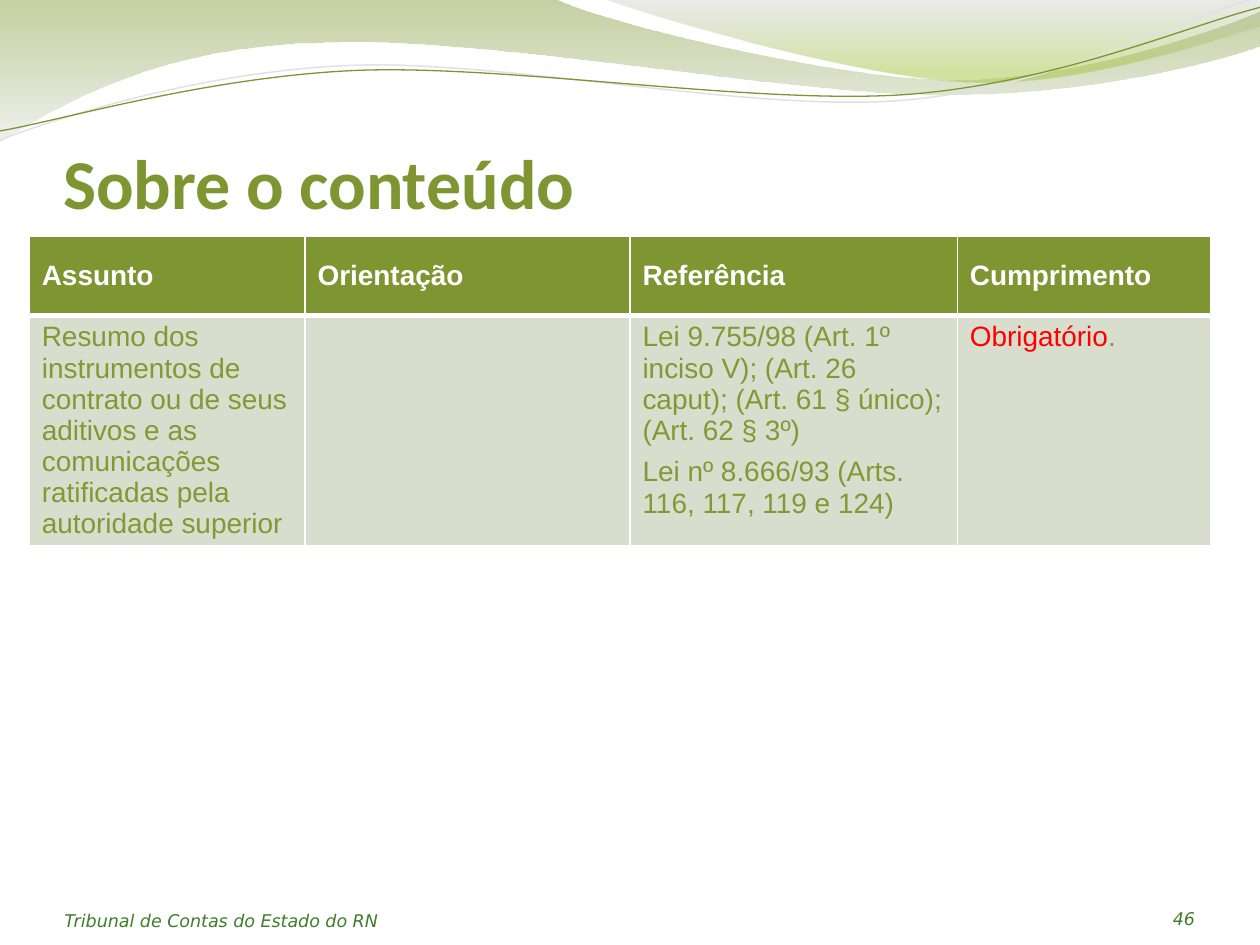
from lxml import etree
from pptx import Presentation
from pptx import util as u
from pptx.dml.color import RGBColor
from pptx.enum import text
from pptx.oxml.ns import qn

GREEN = RGBColor(0x7E, 0x95, 0x32)
BODY_GREEN = RGBColor(0x82, 0x99, 0x34)
FOOTER_GREEN = RGBColor(0x3F, 0x7D, 0x2B)
BAND_GREEN = RGBColor(0x80, 0x99, 0x30)
LIME = RGBColor(0x9E, 0xC1, 0x2F)
SILVER = RGBColor(0xBD, 0xBD, 0xBD)
PALE = RGBColor(0xE7, 0xE7, 0xE7)
LINE_GREY = RGBColor(0xE1, 0xE1, 0xE1)
CELL = RGBColor(0xD8, 0xDD, 0xCE)
WHITE = RGBColor(0xFF, 0xFF, 0xFF)
RED = RGBColor(0xFF, 0x00, 0x00)


def add_run(p, wording, color, **fmt):
    r = p.add_run()
    r.text = wording
    r.font.color.rgb = color
    for name, value in fmt.items():
        setattr(r.font, name, value)


def add_curve(shapes, start, segments, close):
    """Draw line (1 point) and cubic (3 points) segments, in centimetres."""
    fb = shapes.build_freeform(u.Cm(start[0]), u.Cm(start[1]))
    fb.add_line_segments([(u.Cm(x), u.Cm(y)) for seg in segments for x, y in seg],
                         close=close)
    sp = fb.convert_to_shape()
    sp.shadow.inherit = False
    # Merge each three control points into one Bézier segment
    steps = iter(list(sp._element.iter(qn("a:lnTo"))))
    for seg in segments:
        first = next(steps)
        if len(seg) == 3:
            first.tag = qn("a:cubicBezTo")
            for _ in range(2):
                step = next(steps)
                first.append(step[0])
                step.getparent().remove(step)
    return sp


prs = Presentation()
prs.slide_width, prs.slide_height = u.Cm(25.4), u.Cm(19.05)
s = prs.slides.add_slide(prs.slide_layouts[5])

# Gradient bands: start, segments, stops (position, colour, opacity)
bands = [
    ((0, -0.03), [[(11.18, -0.03)],
                  [(12.09, 0.43), (16.87, 1.6), (19.25, 1.6)],
                  [(21.67, 1.6), (24.33, 0.66), (25.4, 0.23)],
                  [(25.43, 0.91)],
                  [(24.97, 1.12), (22.1, 1.93), (18.95, 1.91)],
                  [(15.8, 1.91), (9.7, 0.71), (6.53, 0.86)],
                  [(3.28, 0.89), (1.17, 2.11), (-0.03, 2.87)],
                  [(0, -0.03)]],
     [(0, BAND_GREEN, 45), (1, PALE, 55)]),
    ((12.17, -0.03), [[(12.93, 0.28), (17.32, 1.57), (19.53, 1.65)],
                      [(21.74, 1.75), (24.41, 0.81), (25.4, 0.53)],
                      [(25.4, 0)],
                      [(12.17, -0.03)]],
     [(0, SILVER, 30), (0.8, LIME, 45)]),
]
for start, segments, stops in bands:
    sp = add_curve(s.shapes, start, segments, True)
    sp.line.fill.background()
    sp.fill.gradient()
    sp.fill.gradient_angle = 270
    for stop, (position, color, _) in zip(sp.fill.gradient_stops, stops):
        stop.position = position
        stop.color.rgb = color
    for clr, (_, _, opacity) in zip(sp._element.spPr.iter(qn("a:srgbClr")), stops):
        etree.SubElement(clr, qn("a:alpha"), val=str(opacity * 1000))

# Thin waves
waves = [
    ((0, 2.82), [[(1.22, 2.36), (4.01, 1.45), (7.04, 1.32)],
                 [(10.03, 1.19), (15.06, 2.26), (18.11, 2.03)],
                 [(21.16, 1.8), (23.83, 0.38), (25.35, -0.05)]], LINE_GREY, 0.85),
    ((0, 2.64), [[(1.19, 2.44), (4.17, 1.55), (7.19, 1.42)],
                 [(10.24, 1.3), (15.16, 2.11), (18.21, 1.91)],
                 [(21.23, 1.7), (23.9, 0.53), (25.4, 0.15)]], GREEN, 0.75),
]
for start, segments, color, width in waves:
    sp = add_curve(s.shapes, start, segments, False)
    sp.fill.background()
    sp.line.color.rgb = color
    sp.line.width = u.Pt(width)

# Title, footer and page number
title = s.shapes.title
box = dict(left=u.Cm(1.27), top=u.Cm(1.32), width=u.Cm(22.86), height=u.Cm(3.18))
for name, value in box.items():
    setattr(title, name, value)
footer = s.shapes.add_textbox(u.Cm(1.3), u.Cm(17.74), u.Cm(9.32), u.Cm(1.02))
number = s.shapes.add_textbox(u.Cm(21.98), u.Cm(17.7), u.Cm(2.11), u.Cm(1.02))
title_font = dict(name="Calibri", size=u.Pt(40), bold=True)
small_font = dict(name="DejaVu Sans", size=u.Pt(10), italic=True)
left, right = text.PP_ALIGN.LEFT, text.PP_ALIGN.RIGHT
for sp, wording, color, font, align in [
        (title, "Sobre o conteúdo", GREEN, title_font, left),
        (footer, "Tribunal de Contas do Estado do RN", FOOTER_GREEN, small_font, left),
        (number, "46", FOOTER_GREEN, small_font, right)]:
    tf = sp.text_frame
    frame = dict(word_wrap=True, auto_size=text.MSO_AUTO_SIZE.NONE,
                 vertical_anchor=text.MSO_ANCHOR.BOTTOM, margin_left=0,
                 margin_right=0, margin_top=0, margin_bottom=0)
    for name, value in frame.items():
        setattr(tf, name, value)
    tf.paragraphs[0].alignment = align
    add_run(tf.paragraphs[0], wording, color, **font)

# Table: each cell is a list of paragraphs, each paragraph a list of runs
headers = ["Assunto", "Orientação", "Referência", "Cumprimento"]
details = [
    [[("Resumo dos instrumentos de contrato ou de seus aditivos e as comunicações "
       "ratificadas pela autoridade superior", BODY_GREEN)]],
    [],
    [[("Lei 9.755/98 (Art. 1º inciso V); (Art. 26 caput); (Art. 61 § único); "
       "(Art. 62 § 3º)", BODY_GREEN)],
     [("Lei nº 8.666/93 (Arts. 116, 117, 119 e 124)", BODY_GREEN)]],
    [[("Obrigatório", RED), (".", BODY_GREEN)]],
]
rows = [[[[(h, WHITE)]] for h in headers], details]
widths, row_height = [5.56, 6.55, 6.6, 5.11], 1.6
table = s.shapes.add_table(2, 4, u.Cm(0.59), u.Cm(4.76),
                           u.Cm(sum(widths)), u.Cm(2 * row_height)).table
for col, width in zip(table.columns, widths):
    col.width = u.Cm(width)
for i, row in enumerate(rows):
    for j, paragraphs in enumerate(row):
        cell = table.cell(i, j)
        cell.fill.solid()
        cell.fill.fore_color.rgb = CELL if i else GREEN
        cell.vertical_anchor = text.MSO_ANCHOR.TOP if i else text.MSO_ANCHOR.MIDDLE
        for k, runs in enumerate(paragraphs):
            p = cell.text_frame.add_paragraph() if k else cell.text_frame.paragraphs[0]
            if len(paragraphs) > 1:
                p.space_after = u.Pt(6)
            for wording, color in runs:
                add_run(p, wording, color, name="Arial", size=u.Pt(16), bold=i == 0)
        # White borders, heavier under the header
        tcPr = cell._tc.get_or_add_tcPr()
        for n, side in enumerate("LRTB"):
            width = 3 if (i, side) == (0, "B") else 1
            ln = etree.Element(qn(f"a:ln{side}"), w=str(u.Pt(width)))
            fill = etree.SubElement(ln, qn("a:solidFill"))
            etree.SubElement(fill, qn("a:srgbClr"), val=str(WHITE))
            tcPr.insert(n, ln)

prs.save("out.pptx")
